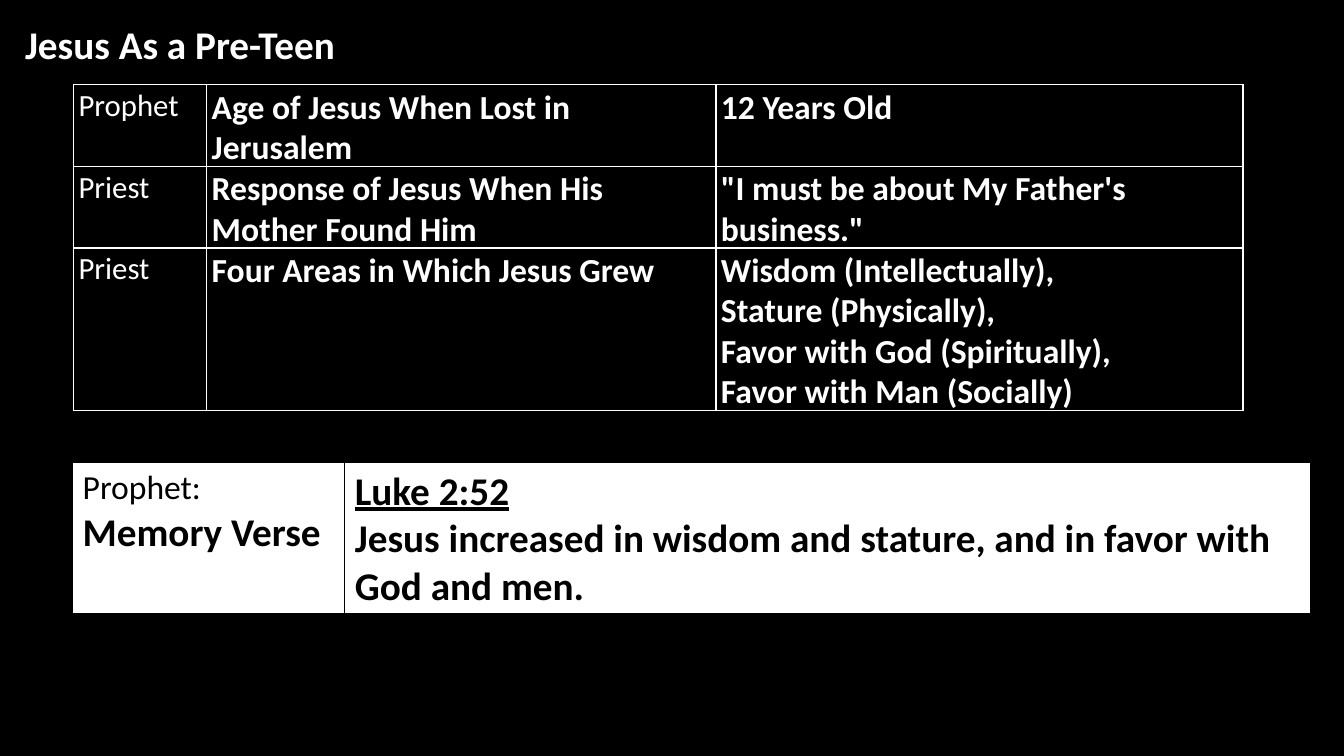
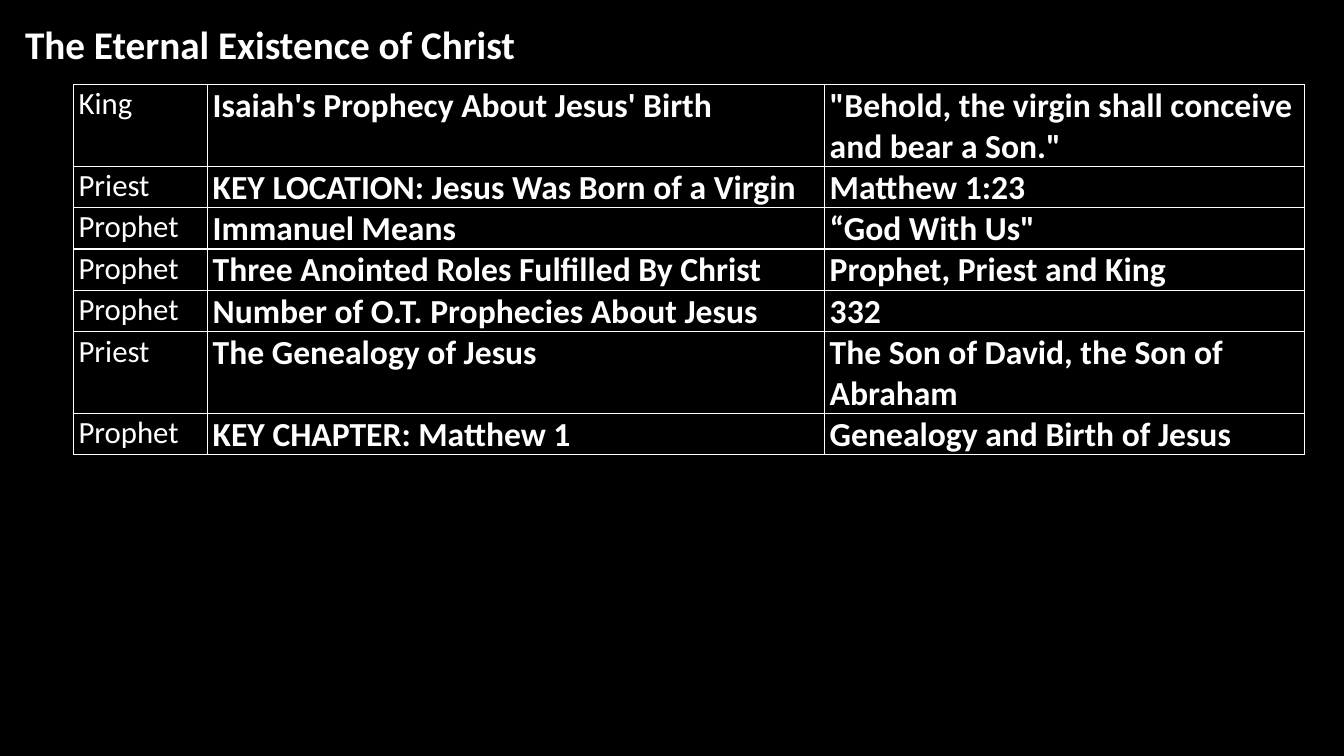
from dataclasses import dataclass
from typing import Optional

from lxml.etree import SubElement
from pptx import Presentation
from pptx.dml.color import RGBColor
from pptx.enum.shapes import MSO_CONNECTOR
from pptx.enum.text import MSO_AUTO_SIZE
from pptx.oxml.ns import qn
from pptx.util import Inches, Pt

FONT = "Calibri"
BLACK = RGBColor(0x00, 0x00, 0x00)
WHITE = RGBColor(0xFF, 0xFF, 0xFF)
ROLE_SIZE, FACT_SIZE, TITLE_SIZE = 22, 24, 28
GRID_TOP = 0.84
LINE_PITCH = 0.4
FACT_MARGINS = (0.05, 0.01, 0.01, 0)
VERSE_MARGINS = (0.1, 0.05, 0.1, 0.05)


@dataclass(frozen=True)
class Line:
    text: str
    size: float = FACT_SIZE
    bold: bool = True
    underline: bool = False


@dataclass(frozen=True)
class Fact:
    role: str
    topic: str
    answer: str
    height: float = 0.41


@dataclass(frozen=True)
class Label:
    text: str
    width: float
    size: float = FACT_SIZE
    bold: bool = True
    height: float = 0.5


@dataclass(frozen=True)
class TableStyle:
    color: RGBColor
    margins: tuple[float, float, float, float]
    fill: Optional[RGBColor] = None


# Text and cell formatting
def write_line(paragraph, text: str, *, size: float, color: RGBColor,
               bold: bool = True, underline: bool = False) -> None:
    run = paragraph.add_run()
    run.text = text
    run.font.name = FONT
    run.font.size = Pt(size)
    run.font.bold = bold
    run.font.underline = underline
    run.font.color.rgb = color


def set_borders(cell, color: RGBColor) -> None:
    properties = cell._tc.get_or_add_tcPr()
    for side in ("lnL", "lnR", "lnT", "lnB"):
        border = SubElement(properties, qn(f"a:{side}"), w=str(Pt(1)))
        fill = SubElement(border, qn("a:solidFill"))
        SubElement(fill, qn("a:srgbClr"), val=str(color))


def fill_cell(cell, lines: list[Line], style: TableStyle) -> None:
    set_borders(cell, style.color)
    if style.fill is None:
        cell.fill.background()
    else:
        cell.fill.solid()
        cell.fill.fore_color.rgb = style.fill
    (cell.margin_left, cell.margin_top,
     cell.margin_right, cell.margin_bottom) = map(Inches, style.margins)
    frame = cell.text_frame
    for index, line in enumerate(lines):
        paragraph = frame.add_paragraph() if index else frame.paragraphs[0]
        write_line(paragraph, line.text, size=line.size, color=style.color,
                   bold=line.bold, underline=line.underline)


# Slide parts
def add_titled_slide(presentation, title: str):
    slide = presentation.slides.add_slide(presentation.slide_layouts[6])
    slide.background.fill.solid()
    slide.background.fill.fore_color.rgb = BLACK
    box = slide.shapes.add_textbox(Inches(0.15), Inches(0.15), Inches(11.66), Inches(0.57))
    box.text_frame.word_wrap = True
    box.text_frame.auto_size = MSO_AUTO_SIZE.SHAPE_TO_FIT_TEXT
    write_line(box.text_frame.paragraphs[0], title, size=TITLE_SIZE, color=WHITE)
    return slide


def add_table(slide, left: float, top: float, widths: list[float], heights: list[float],
              rows: list[list[list[Line]]], style: TableStyle) -> None:
    table = slide.shapes.add_table(
        len(rows), len(widths), Inches(left), Inches(top),
        Inches(sum(widths)), Inches(sum(heights))).table
    table.first_row = table.horz_banding = False
    for column, width in zip(table.columns, widths):
        column.width = Inches(width)
    for row, height, contents in zip(table.rows, heights, rows):
        row.height = Inches(height)
        for cell, lines in zip(row.cells, contents):
            fill_cell(cell, lines, style)


def add_rule(slide, x1: float, y1: float, x2: float, y2: float) -> None:
    rule = slide.shapes.add_connector(
        MSO_CONNECTOR.STRAIGHT, Inches(x1), Inches(y1), Inches(x2), Inches(y2))
    rule.line.color.rgb = WHITE
    rule.line.width = Pt(1)
    SubElement(rule._element.spPr, qn("a:effectLst"))


def add_label(slide, left: float, top: float, label: Label) -> None:
    box = slide.shapes.add_textbox(
        Inches(left), Inches(top), Inches(label.width), Inches(label.height))
    frame = box.text_frame
    frame.margin_left = frame.margin_top = frame.margin_right = frame.margin_bottom = 0
    frame.word_wrap = False
    frame.auto_size = MSO_AUTO_SIZE.SHAPE_TO_FIT_TEXT
    write_line(frame.paragraphs[0], label.text, size=label.size, color=WHITE,
               bold=label.bold)


def add_ruled_grid(slide, columns: list[float], rows: list[float],
                   contents: list[list[list[Label]]]) -> None:
    for x in columns:
        add_rule(slide, x, rows[0], x, rows[-1] + 0.01)
    for y in rows:
        add_rule(slide, columns[0] - 0.01, y, columns[-1] + 0.01, y)
    for y, cells in zip(rows, contents):
        for x, labels in zip(columns, cells):
            for index, label in enumerate(labels):
                add_label(slide, x + 0.05, y + 0.01 + index * LINE_PITCH, label)


def role_label(text: str, width: float) -> Label:
    return Label(text, width, ROLE_SIZE, bold=False, height=0.45)


# Slide contents
PRE_TEEN_COLUMNS = [0.73, 2.05, 7.1, 12.33]
PRE_TEEN_ROWS = [GRID_TOP, 1.65, 2.46, 4.07]
PRE_TEEN_FACTS = [
    [[role_label("Prophet", 1.16)],
     [Label("Age of Jesus When Lost in", 3.82), Label("Jerusalem", 1.57)],
     [Label("12 Years Old", 1.91)]],
    [[role_label("Priest", 0.86)],
     [Label("Response of Jesus When His", 4.14), Label("Mother Found Him", 2.81)],
     [Label("\"I must be about My Father's", 4.29), Label("business.\"", 1.6)]],
    [[role_label("Priest", 0.86)],
     [Label("Four Areas in Which Jesus Grew", 4.58)],
     [Label("Wisdom (Intellectually),", 3.5), Label("Stature (Physically),", 2.92),
      Label("Favor with God (Spiritually),", 4.06),
      Label("Favor with Man (Socially)", 3.69)]],
]
MEMORY_VERSE = [[
    [Line("Prophet:", FACT_SIZE, bold=False), Line("Memory Verse", TITLE_SIZE)],
    [Line("Luke 2:52", TITLE_SIZE, underline=True),
     Line("Jesus increased in wisdom and stature, and in favor with God and men.",
          TITLE_SIZE)],
]]
ETERNAL_FACTS = [
    Fact("King", "Isaiah's Prophecy About Jesus' Birth",
         "\"Behold, the virgin shall conceive and bear a Son.\"", 0.81),
    Fact("Priest", "KEY LOCATION: Jesus Was Born of a Virgin", "Matthew 1:23"),
    Fact("Prophet", "Immanuel Means", "“God With Us\""),
    Fact("Prophet", "Three Anointed Roles Fulfilled By Christ", "Prophet, Priest and King"),
    Fact("Prophet", "Number of O.T. Prophecies About Jesus", "332"),
    Fact("Priest", "The Genealogy of Jesus", "The Son of David, the Son of Abraham", 0.81),
    Fact("Prophet", "KEY CHAPTER: Matthew 1", "Genealogy and Birth of Jesus"),
]


def main() -> None:
    presentation = Presentation()
    presentation.slide_width = Inches(13.33)
    presentation.slide_height = Inches(7.5)

    slide = add_titled_slide(presentation, "Jesus As a Pre-Teen")
    add_ruled_grid(slide, PRE_TEEN_COLUMNS, PRE_TEEN_ROWS, PRE_TEEN_FACTS)
    add_table(slide, 0.72, 4.59, [2.7, 9.58], [1.5], MEMORY_VERSE,
              TableStyle(BLACK, VERSE_MARGINS, fill=WHITE))

    slide = add_titled_slide(presentation, "The Eternal Existence of Christ")
    rows = [[[Line(fact.role, ROLE_SIZE, bold=False)], [Line(fact.topic)],
             [Line(fact.answer)]] for fact in ETERNAL_FACTS]
    add_table(slide, 0.73, GRID_TOP, [1.33, 6.12, 4.76],
              [fact.height for fact in ETERNAL_FACTS], rows,
              TableStyle(WHITE, FACT_MARGINS))

    presentation.save("out.pptx")


if __name__ == "__main__":
    main()
